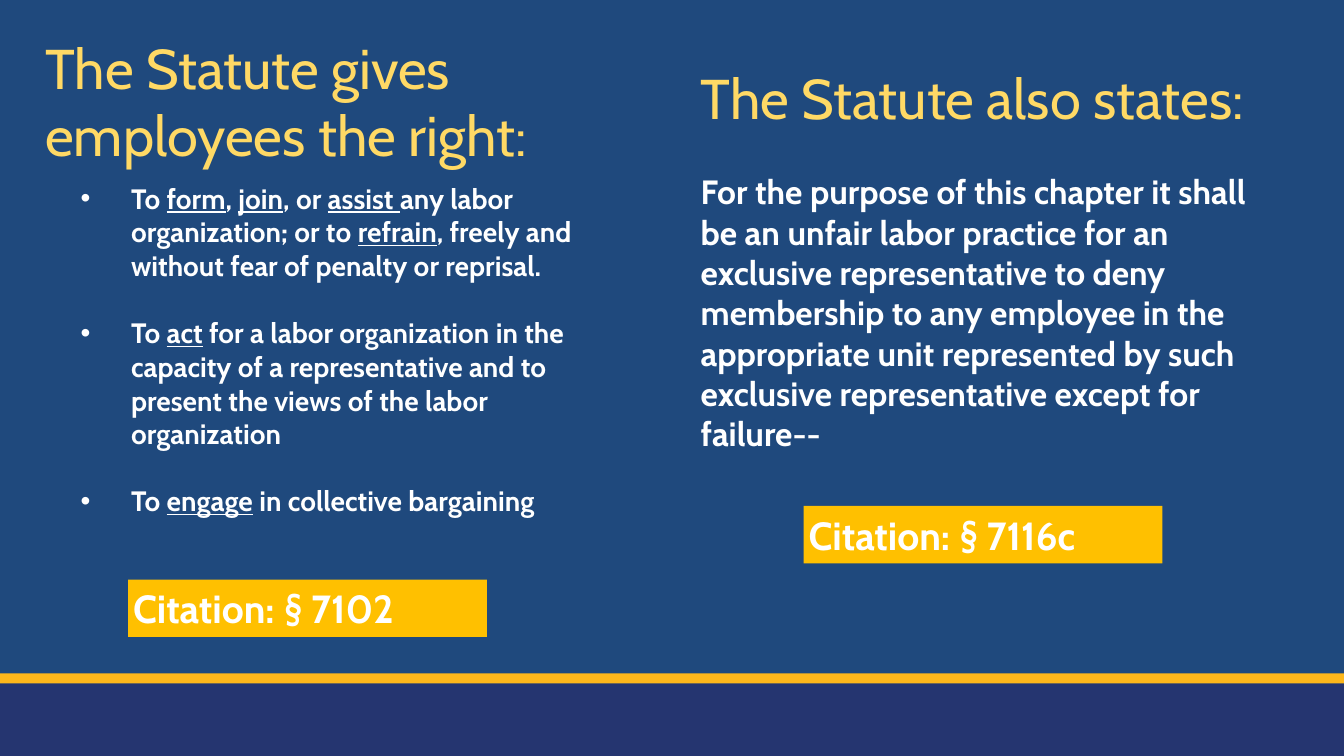
from lxml.etree import SubElement
from pptx import Presentation
from pptx.dml.color import RGBColor
from pptx.enum.shapes import MSO_SHAPE
from pptx.enum.text import MSO_ANCHOR, PP_ALIGN
from pptx.oxml.ns import qn
from pptx.util import Inches, Pt

COLORS = {
    "background": "1F497D", "footer": "253570", "stripe": "FDB71B",
    "title": "FFD965", "citation": "FFC000", "text": "FFFFFF",
}
FONT = "Cabin"
SLIDE_WIDTH, SLIDE_HEIGHT = 13.33, 7.5
FOOTER_HEIGHT, STRIPE_HEIGHT = 0.72, 0.1
COLUMN_WIDTH = 5.68
CITATION_SIZE = (3.56, 0.57)
INSET = 0.05

RIGHTS_TITLE = "The Statute gives employees the right:"
RIGHTS = [
    [("To ", False), ("form", True), (", ", False), ("join", True), (", or ", False),
     ("assist ", True), ("any labor organization; or to ", False), ("refrain", True),
     (", freely and without fear of penalty or reprisal.", False)],
    [("To ", False), ("act", True),
     (" for a labor organization in the capacity of a representative and to present "
      "the views of the labor organization", False)],
    [("To ", False), ("engage", True), (" in collective bargaining", False)],
]
STATES_TITLE = "The Statute also states:"
STATES_BODY = (
    "For the purpose of this chapter it shall be an unfair labor practice for an "
    "exclusive representative to deny membership to any employee in the appropriate "
    "unit represented by such exclusive representative except for failure--"
)
CITATIONS = [("§ 7102", 1.27, 5.75), ("§ 7116c", 7.97, 5.02)]


def color(name):
    return RGBColor.from_string(COLORS[name])


def prepare_frame(shape):
    frame = shape.text_frame
    frame.word_wrap = True
    frame.vertical_anchor = MSO_ANCHOR.TOP
    frame.margin_left = frame.margin_right = Inches(INSET)
    frame.margin_top = frame.margin_bottom = Inches(INSET)
    return frame


def add_text_box(slide, left, top, width, height):
    return prepare_frame(slide.shapes.add_textbox(*map(Inches, (left, top, width, height))))


def add_bar(slide, left, top, width, height, fill):
    shape = slide.shapes.add_shape(
        MSO_SHAPE.RECTANGLE, *map(Inches, (left, top, width, height)))
    shape.shadow.inherit = False
    shape.fill.solid()
    shape.fill.fore_color.rgb = color(fill)
    shape.line.fill.background()
    return shape


def add_run(paragraph, text, size, fill="text", bold=True, underline=False):
    paragraph.alignment = PP_ALIGN.LEFT
    run = paragraph.add_run()
    run.text = text
    run.font.name = FONT
    run.font.size = Pt(size)
    run.font.bold = bold
    run.font.underline = underline
    run.font.color.rgb = color(fill)


def add_bullet(paragraph, indent):
    properties = paragraph._p.get_or_add_pPr()
    properties.set("marL", str(Inches(indent)))
    properties.set("indent", str(-Inches(indent)))
    SubElement(properties, qn("a:buFont")).set("typeface", "Arial")
    SubElement(properties, qn("a:buChar")).set("char", "•")


def add_rights(slide):
    title = add_text_box(slide, 0.4, 0.28, COLUMN_WIDTH, 1.44)
    add_run(title.paragraphs[0], RIGHTS_TITLE, 40, "title", bold=False)
    frame = add_text_box(slide, 0.75, 1.75, 5.2, 4.07)
    for index, pieces in enumerate(RIGHTS):
        paragraph = frame.add_paragraph() if index else frame.paragraphs[0]
        add_bullet(paragraph, 0.5)
        if index:
            paragraph.space_before = Pt(24)
        for text, underline in pieces:
            add_run(paragraph, text, 20, underline=underline)


def add_statement(slide):
    frame = add_text_box(slide, 6.9, 0.58, COLUMN_WIDTH, 4.73)
    add_run(frame.paragraphs[0], STATES_TITLE, 40, "title", bold=False)
    body = frame.add_paragraph()
    body.space_before = Pt(29)
    add_run(body, STATES_BODY, 24)


def main():
    presentation = Presentation()
    presentation.slide_width = Inches(SLIDE_WIDTH)
    presentation.slide_height = Inches(SLIDE_HEIGHT)
    slide = presentation.slides.add_slide(presentation.slide_layouts[6])
    slide.background.fill.solid()
    slide.background.fill.fore_color.rgb = color("background")

    footer_top = SLIDE_HEIGHT - FOOTER_HEIGHT
    add_bar(slide, 0, footer_top, SLIDE_WIDTH, FOOTER_HEIGHT, "footer")
    add_bar(slide, 0, footer_top - STRIPE_HEIGHT, SLIDE_WIDTH, STRIPE_HEIGHT, "stripe")
    add_rights(slide)
    add_statement(slide)
    for section, left, top in CITATIONS:
        frame = prepare_frame(add_bar(slide, left, top, *CITATION_SIZE, "citation"))
        add_run(frame.paragraphs[0], f"Citation:\t{section}", 28)
    presentation.save("out.pptx")


if __name__ == "__main__":
    main()
